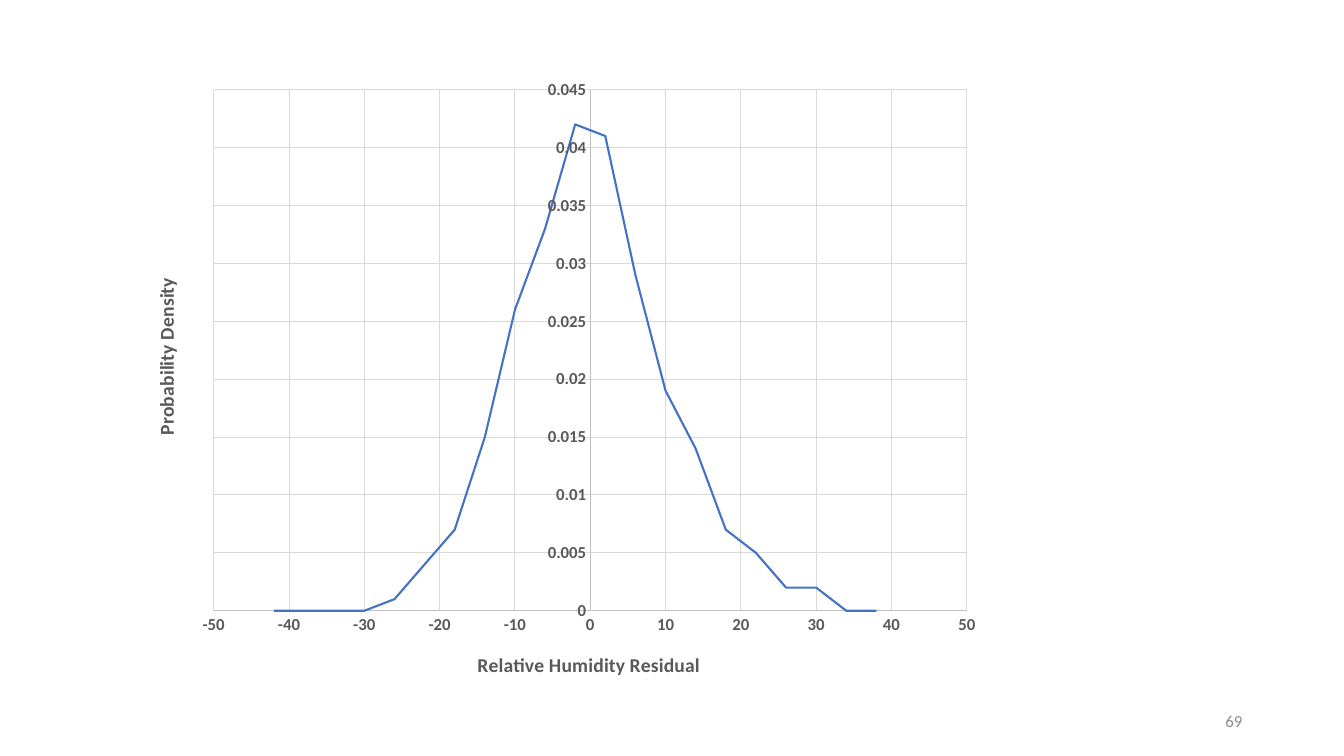
from lxml import etree
from pptx import Presentation
from pptx.chart.data import XyChartData
from pptx.dml.color import RGBColor
from pptx.enum.chart import XL_CHART_TYPE, XL_MARKER_STYLE, XL_TICK_MARK
from pptx.enum.text import MSO_ANCHOR, PP_ALIGN
from pptx.oxml.ns import qn
from pptx.util import Inches, Pt

SCATTER = XL_CHART_TYPE.XY_SCATTER_LINES_NO_MARKERS
NO_MARKER = XL_MARKER_STYLE.NONE
NO_TICK = XL_TICK_MARK.NONE
MIDDLE = MSO_ANCHOR.MIDDLE
RIGHT, CENTER = PP_ALIGN.RIGHT, PP_ALIGN.CENTER

FONT = "Calibri"
COLORS = {"curve": "4472C4", "label": "595959", "axis": "BFBFBF",
          "grid": "D9D9D9", "number": "8C8C8C"}
BLANK_LAYOUT = 6
CHART_LEFT, CHART_TOP, CHART_WIDTH, CHART_HEIGHT = 1.31, 0.67, 8.54, 6.28


def write_text(text_frame, text, size=12, color="label", bold=False, align=CENTER):
    paragraph = text_frame.paragraphs[0]
    paragraph.alignment = align
    run = paragraph.add_run()
    run.text = text
    run.font.name = FONT
    run.font.size = Pt(size)
    run.font.bold = bold
    run.font.color.rgb = RGBColor.from_string(COLORS[color])


def place(element, index, left, top, width=None, height=None):
    for old_layout in element.findall(qn("c:layout")):
        element.remove(old_layout)
    layout = etree.Element(qn("c:layout"))
    manual = etree.SubElement(layout, qn("c:manualLayout"))
    shares = {"x": (left - CHART_LEFT) / CHART_WIDTH, "y": (top - CHART_TOP) / CHART_HEIGHT}
    if width:
        etree.SubElement(manual, qn("c:layoutTarget")).set("val", "inner")
        shares.update(w=width / CHART_WIDTH, h=height / CHART_HEIGHT)
    for mode in ("xMode", "yMode"):
        etree.SubElement(manual, qn(f"c:{mode}")).set("val", "edge")
    for name, share in shares.items():
        etree.SubElement(manual, qn(f"c:{name}")).set("val", str(share))
    element.insert(index, layout)


presentation = Presentation()
presentation.slide_width = Inches(13.33)
presentation.slide_height = Inches(7.5)
slide = presentation.slides.add_slide(presentation.slide_layouts[BLANK_LAYOUT])

densities = [0, 0, 0, 0, 0.001, 0.004, 0.007, 0.015, 0.026, 0.033, 0.042,
             0.041, 0.029, 0.019, 0.014, 0.007, 0.005, 0.002, 0.002, 0, 0]
first_residual, residual_step = -42, 4
chart_data = XyChartData()
density_series = chart_data.add_series("Series 1")
for position, density in enumerate(densities):
    density_series.add_data_point(first_residual + residual_step * position, density)

chart = slide.shapes.add_chart(
    SCATTER, Inches(CHART_LEFT), Inches(CHART_TOP),
    Inches(CHART_WIDTH), Inches(CHART_HEIGHT), chart_data).chart
chart.has_legend = False
chart.has_title = False
chart.font.name = FONT
chart.font.size = Pt(10)

curve = chart.plots[0].series[0]
curve.smooth = False
curve.marker.style = NO_MARKER
curve.format.line.width = Pt(1.5)
curve.format.line.color.rgb = RGBColor.from_string(COLORS["curve"])

axes = [
    (chart.category_axis, "Relative Humidity Residual", -50, 50, 10, 4.7, 6.43),
    (chart.value_axis, "Probability Density", 0, 0.045, 0.005, 1.48, 2.72),
]
for axis, title, minimum, maximum, unit, title_left, title_top in axes:
    axis.minimum_scale, axis.maximum_scale, axis.major_unit = minimum, maximum, unit
    axis.major_tick_mark = axis.minor_tick_mark = NO_TICK
    axis.has_major_gridlines = True
    for line, color in ((axis.format.line, "axis"),
                        (axis.major_gridlines.format.line, "grid")):
        line.width = Pt(0.75)
        line.color.rgb = RGBColor.from_string(COLORS[color])
    axis.tick_labels.number_format = "General"
    axis.tick_labels.number_format_is_linked = False
    label_font = axis.tick_labels.font
    label_font.name = FONT
    label_font.size = Pt(12)
    label_font.bold = True
    label_font.color.rgb = RGBColor.from_string(COLORS["label"])
    write_text(axis.axis_title.text_frame, title, size=14, bold=True)
    title_element = axis.axis_title.text_frame._txBody.getparent().getparent()
    place(title_element, 1, title_left, title_top)

body_properties = chart.value_axis.axis_title.text_frame._txBody.find(qn("a:bodyPr"))
body_properties.set("rot", "-5400000")
body_properties.set("vert", "horz")
plot_area = chart._chartSpace.find(qn("c:chart")).find(qn("c:plotArea"))
place(plot_area, 0, 2.12, 0.89, 7.47, 5.17)

number_box = slide.shapes.add_textbox(Inches(9.42), Inches(6.95), Inches(3), Inches(0.4))
number_box.text_frame.word_wrap = True
number_box.text_frame.vertical_anchor = MIDDLE
write_text(number_box.text_frame, "69", color="number", align=RIGHT)

presentation.save("out.pptx")
